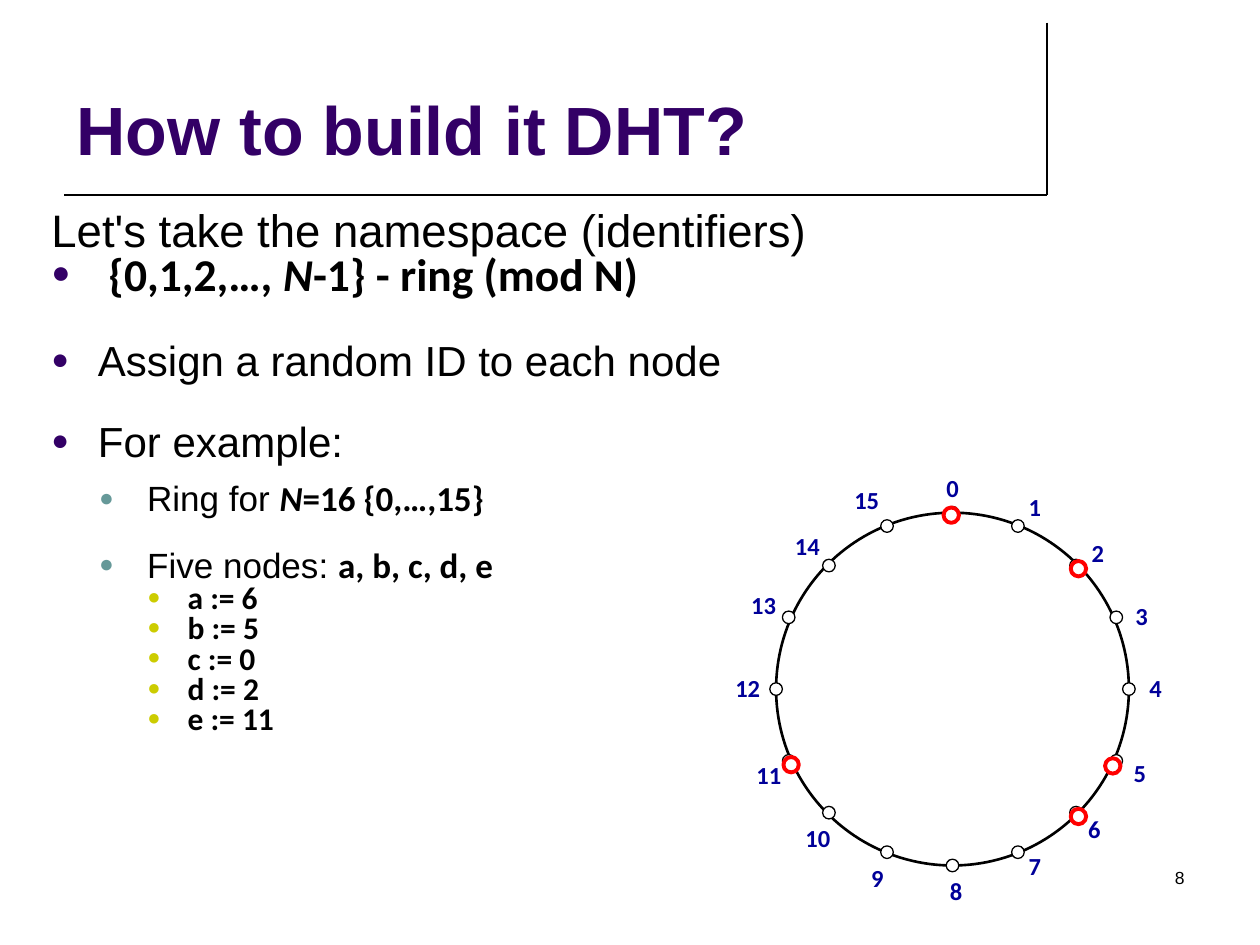
from lxml.etree import SubElement
from pptx import Presentation
from pptx.dml.color import RGBColor
from pptx.enum.shapes import MSO_CONNECTOR as Connector, MSO_SHAPE as Shape
from pptx.enum.text import MSO_ANCHOR as Anchor, PP_ALIGN as Align
from pptx.oxml.ns import qn
from pptx.util import Pt

COLORS = {
    "ink": "000000", "paper": "FFFFFF", "title": "330066", "teal": "669999",
    "olive": "CCCC00", "label": "000099", "node": "FF0000",
}
SLOTS = 16
# Slot centres on one quarter of the ring, from the top to the right
QUARTER = [(0, -100.8), (37.4, -93.2), (70.6, -70.6), (93.6, -41), (100.8, 0)]
# Label centres for slots 0 to 15, measured from the ring centre
LABELS = [
    (0, -115), (47, -104), (83, -78), (108, -42), (116, -1), (107, 48),
    (81, 80), (47, 101), (2, 115), (-43, 108), (-77, 85), (-105, 49),
    (-117, -1), (-108, -48), (-83, -82), (-49, -108),
]
# Occupied slots and how far each marker sits from its slot
NODES = {0: (-0.7, 1.4), 6: (1.4, 2.2), 2: (1.4, 1.8), 11: (1.4, 2.2), 5: (-2, 2.9)}
# Bullet levels: left margin, hanging indent, bullet colour
LEVELS = [(26.6, 26.6, "title"), (54.7, 27.4, "teal"), (77.8, 23, "olive")]
# Lines: level (None is unbulleted), size, space before, (text, style) runs
LINES = [
    (None, 26, 0, [("Let's take the namespace (identifiers)", "")]),
    (0, 26, 0, [("{0,1,2,…, ", "b"), ("N", "bi"), ("-1} - ring (mod N)", "b")]),
    (0, 24, 25, [("Assign a random ID to each node", "")]),
    (0, 24, 23.5, [("For example:", "")]),
    (1, 20, 11, [("Ring for ", ""), ("N", "bi"), ("=16 {0,…,15}", "b")]),
    (1, 20, 19, [("Five nodes: ", ""), ("a, b, c, d, e", "b")]),
] + [(2, 18, 0, [(f"{name} := {slot}", "b")])
     for name, slot in zip("abcde", (6, 5, 0, 2, 11))]


def color(name):
    return RGBColor.from_string(COLORS[name])


def add_text(page, left, top, width, height, anchor=Anchor.TOP, inset=None):
    box = page.shapes.add_textbox(Pt(left), Pt(top), Pt(width), Pt(height))
    frame = box.text_frame
    frame.word_wrap = True
    frame.vertical_anchor = anchor
    if inset is not None:
        frame.margin_left = frame.margin_right = Pt(inset)
        frame.margin_top = frame.margin_bottom = Pt(inset)
    return frame


def style(para, size, ink, face="Arial", bold=False, align=Align.LEFT):
    para.alignment = align
    para.font.size, para.font.name, para.font.bold = Pt(size), face, bold
    para.font.color.rgb = color(ink)


def add_circle(page, x, y, diameter, line, weight, filled=True):
    """Circle centred on x, y."""
    circle = page.shapes.add_shape(
        Shape.OVAL, Pt(x - diameter / 2), Pt(y - diameter / 2), Pt(diameter), Pt(diameter))
    circle.shadow.inherit = False
    if filled:
        circle.fill.solid()
        circle.fill.fore_color.rgb = color("paper")
    else:
        circle.fill.background()
    circle.line.color.rgb = color(line)
    circle.line.width = Pt(weight)


def add_rule(page, x1, y1, x2, y2):
    rule = page.shapes.add_connector(Connector.STRAIGHT, Pt(x1), Pt(y1), Pt(x2), Pt(y2))
    rule.line.color.rgb = color("ink")
    rule.line.width = Pt(1)
    SubElement(rule._element.spPr, qn("a:effectLst"))


def add_bullet(para, level, extra=0):
    margin, hanging, ink = LEVELS[level]
    props = para._p.get_or_add_pPr()
    props.set("marL", str(Pt(margin + extra)))
    props.set("indent", str(-Pt(hanging + extra)))
    tint = SubElement(props, qn("a:buClr"))
    SubElement(tint, qn("a:srgbClr"), val=COLORS[ink])
    SubElement(props, qn("a:buSzPct"), val="70000")
    SubElement(props, qn("a:buFont"), typeface="Arial")
    SubElement(props, qn("a:buChar"), char="●")


def add_heading(page, left, top, width, height):
    right, bottom = left + width, top + height
    add_rule(page, right, top, right, bottom)
    add_rule(page, left, bottom, right, bottom)
    frame = add_text(page, left, top, width, height - 11.5, Anchor.BOTTOM)
    para = frame.paragraphs[0]
    para.text = "How to build it DHT?"
    style(para, 39, "title", bold=True)


def add_body(page, left, top, width, height):
    frame = add_text(page, left, top, width, height)
    for index, (level, size, before, runs) in enumerate(LINES):
        para = frame.paragraphs[0] if index == 0 else frame.add_paragraph()
        para.line_spacing = 0.8
        if before:
            para.space_before = Pt(before)
        if level is not None:
            para.level = level
            # The set of identifiers stands slightly further in
            add_bullet(para, level, extra=6 if index == 1 else 0)
        style(para, size, "ink")
        for text, marks in runs:
            span = para.add_run()
            span.text = text
            span.font.name = "Calibri" if marks else "Arial"
            span.font.bold = "b" in marks
            span.font.italic = "i" in marks


def slot_offset(slot):
    """Mirror the quarter table into the other three quarters."""
    step = min(slot, SLOTS - slot)
    x, y = QUARTER[min(step, SLOTS // 2 - step)]
    return (x if slot == step else -x), (y if step <= SLOTS // 4 else -y)


def add_ring(page, left, top, diameter):
    x, y = left + diameter / 2, top + diameter / 2
    add_circle(page, x, y, diameter, "ink", 1.5, filled=False)
    # Slots and their numbers
    for slot, (label_x, label_y) in enumerate(LABELS):
        dx, dy = slot_offset(slot)
        add_circle(page, x + dx, y + dy, 7.2, "ink", 0.75)
        frame = add_text(page, x + label_x - 17, y + label_y - 8.3, 34, 16.6,
                         Anchor.MIDDLE, inset=0)
        para = frame.paragraphs[0]
        para.text = str(slot)
        style(para, 14, "label", "Calibri", True, Align.CENTER)
    # Occupied slots
    for slot, (nudge_x, nudge_y) in NODES.items():
        dx, dy = slot_offset(slot)
        add_circle(page, x + dx + nudge_x, y + dy + nudge_y, 8.8, "node", 2.25)


def add_page_number(page, left, top, width, height):
    para = add_text(page, left, top, width, height).paragraphs[0]
    para.text = "8"
    style(para, 10, "ink", align=Align.RIGHT)


def main():
    deck = Presentation()
    deck.slide_width, deck.slide_height = Pt(720), Pt(540)
    page = deck.slides.add_slide(deck.slide_layouts[6])
    add_heading(page, 36.7, 13, 561.6, 98.6)
    add_page_number(page, 516.2, 491.8, 167.8, 36)
    add_body(page, 22.3, 118.1, 697.7, 421.9)
    add_ring(page, 443.5, 293, 201.6)
    deck.save("out.pptx")


if __name__ == "__main__":
    main()
